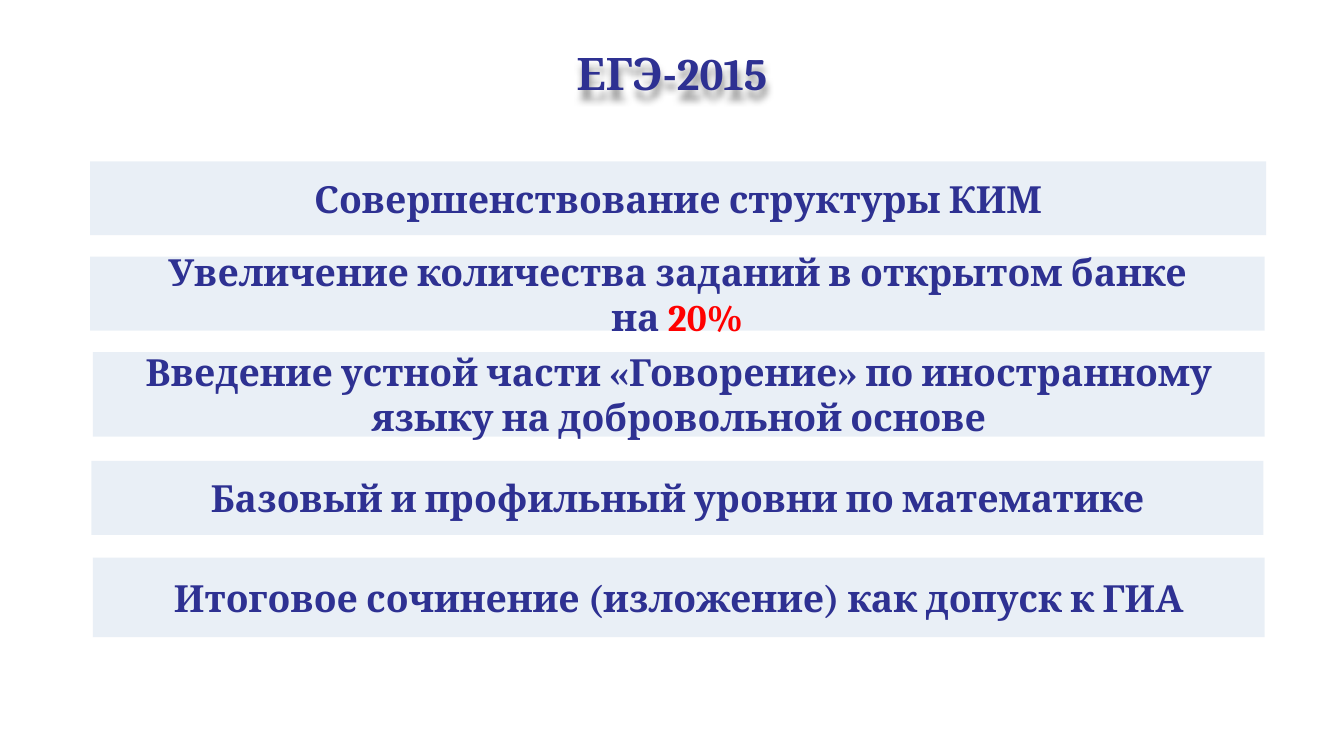
from lxml.etree import SubElement
from pptx import Presentation
from pptx.dml.color import RGBColor
from pptx.enum.shapes import MSO_SHAPE
from pptx.enum.text import MSO_ANCHOR, MSO_AUTO_SIZE, PP_ALIGN
from pptx.oxml.ns import qn
from pptx.util import Inches, Pt

NAVY = RGBColor(0x2E, 0x31, 0x92)
RED = RGBColor(0xFF, 0x00, 0x00)
PALE_BLUE = RGBColor(0xB9, 0xCD, 0xE5)

BAND_OPACITY = 31
FONT_FORMAT = {"name": "Cambria", "bold": True}
NO_BREAK_SPACE = chr(160)

# Left, top, width, height and the (text, colour) parts of each change
CHANGES = [
    (0.67, 1.2, 8.75, 0.55, [("Совершенствование структуры КИМ", NAVY)]),
    (0.67, 1.91, 8.74, 0.55,
     [("Увеличение количества заданий в открытом банке на" + NO_BREAK_SPACE, NAVY),
      ("20%", RED)]),
    (0.69, 2.62, 8.72, 0.63,
     [("Введение устной части «Говорение» по иностранному языку "
       "на добровольной основе", NAVY)]),
    (0.68, 3.43, 8.72, 0.55, [("Базовый и профильный уровни по математике", NAVY)]),
    (0.69, 4.15, 8.72, 0.59,
     [("Итоговое сочинение (изложение) как допуск к ГИА", NAVY)]),
]


def write_centred(frame, parts, size):
    frame.word_wrap = True
    paragraph = frame.paragraphs[0]
    paragraph.alignment = PP_ALIGN.CENTER
    for text, colour in parts:
        run = paragraph.add_run()
        run.text = text
        for attribute, value in {**FONT_FORMAT, "size": Pt(size)}.items():
            setattr(run.font, attribute, value)
        run.font.color.rgb = colour


def add_soft_shadow(shape):
    effects = SubElement(shape.element.spPr, qn("a:effectLst"))
    shadow = SubElement(effects, qn("a:outerShdw"), blurRad=str(Pt(4)),
                        dist=str(Pt(4)), dir="5400000", algn="t", rotWithShape="0")
    black = SubElement(shadow, qn("a:srgbClr"), val="000000")
    SubElement(black, qn("a:alpha"), val="40000")


def add_title(slide, text):
    title = slide.shapes.add_textbox(Inches(0), Inches(0.29), Inches(10), Inches(0.5))
    write_centred(title.text_frame, [(text, NAVY)], 24)
    title.text_frame.auto_size = MSO_AUTO_SIZE.SHAPE_TO_FIT_TEXT
    add_soft_shadow(title)


def add_band(slide, left, top, width, height, parts):
    """Add a translucent strip that holds one change."""
    band = slide.shapes.add_shape(MSO_SHAPE.RECTANGLE, Inches(left), Inches(top),
                                  Inches(width), Inches(height))
    band.shadow.inherit = False
    band.line.fill.background()
    band.fill.solid()
    band.fill.fore_color.rgb = PALE_BLUE
    colour = band.element.spPr.find(qn("a:solidFill")).find(qn("a:srgbClr"))
    SubElement(colour, qn("a:alpha"), val=str(BAND_OPACITY * 1000))
    band.text_frame.vertical_anchor = MSO_ANCHOR.MIDDLE
    write_centred(band.text_frame, parts, 20)


def main():
    presentation = Presentation()
    presentation.slide_width = Inches(10)
    presentation.slide_height = presentation.slide_width * 9 // 16
    slide = presentation.slides.add_slide(presentation.slide_layouts[6])
    add_title(slide, "ЕГЭ-2015")
    for change in CHANGES:
        add_band(slide, *change)
    presentation.save("out.pptx")


if __name__ == "__main__":
    main()
